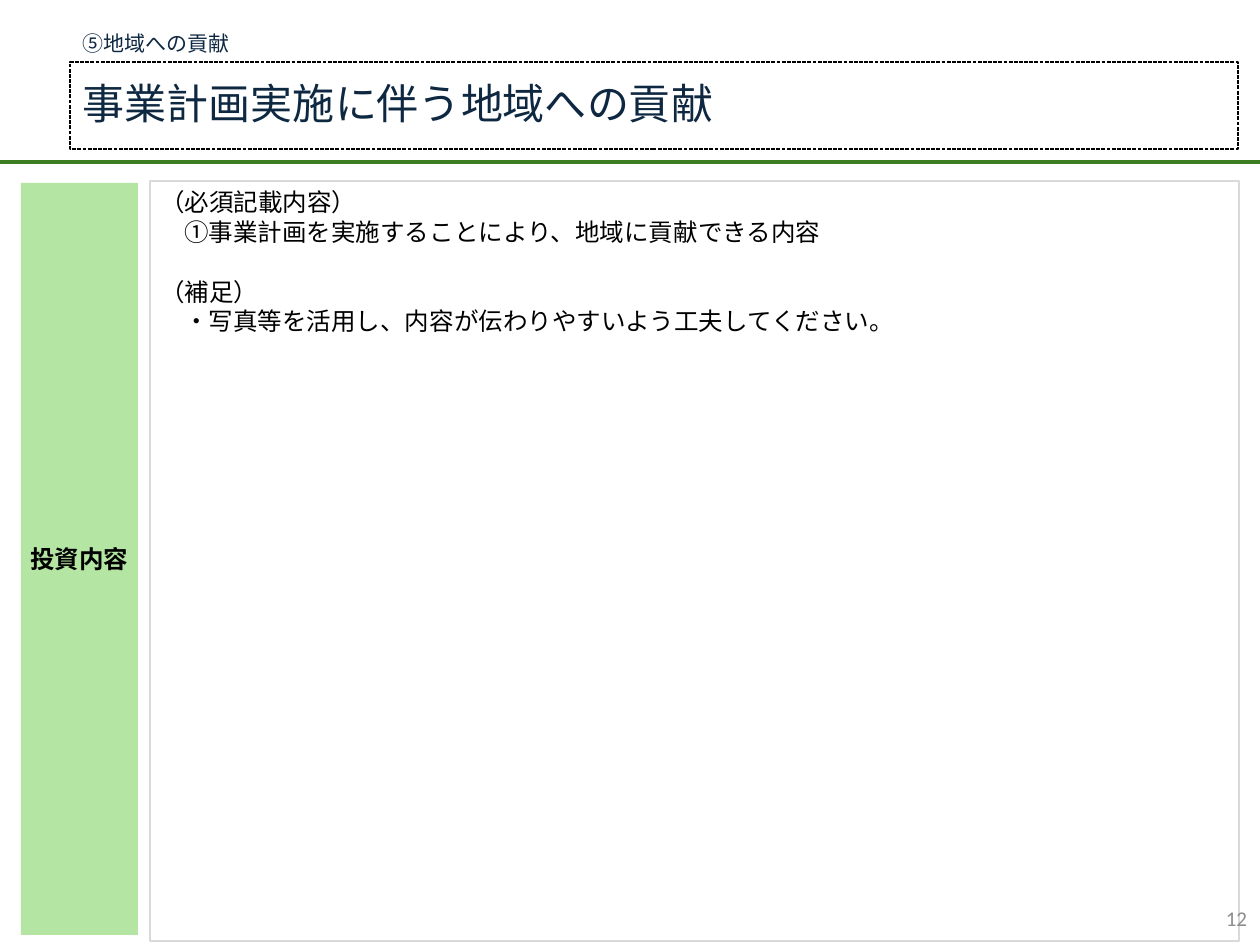
"""Build the regional contribution slide of a business plan."""
from dataclasses import dataclass
from typing import Optional

import pptx
import pptx.util
import pptx.dml.color
import pptx.enum.dml
import pptx.enum.shapes
import pptx.enum.text
import pptx.oxml
import pptx.oxml.ns

RGB = pptx.dml.color.RGBColor
ALIGN = pptx.enum.text.PP_ALIGN
ANCHOR = pptx.enum.text.MSO_ANCHOR
Pt = pptx.util.Pt

EMU_PER_PX = 914400 / 126
WIDTH, HEIGHT = 1260, 945
JP_FONT = "Noto Sans CJK JP"

WHITE = RGB(0xFF, 0xFF, 0xFF)
BLACK = RGB(0x00, 0x00, 0x00)
NAVY = RGB(0x0E, 0x28, 0x41)
GREEN = RGB(0x3B, 0x7D, 0x23)
LIGHT_GREEN = RGB(0xB4, 0xE5, 0xA2)
LIGHT_GRAY = RGB(0xD9, 0xD9, 0xD9)
GRAY = RGB(0x8C, 0x8C, 0x8C)


@dataclass(frozen=True)
class Para:
    text: str
    indent: int = 0
    before: int = 0


@dataclass(frozen=True)
class Panel:
    box: tuple[int, int, int, int]
    paras: tuple[Para, ...]
    size: int
    color: RGB = BLACK
    font: str = JP_FONT
    bold: bool = False
    align: ALIGN = ALIGN.LEFT
    anchor: ANCHOR = ANCHOR.MIDDLE
    insets: tuple[int, int] = (13, 6)
    spacing: Optional[float] = None
    fill: Optional[RGB] = None
    line: Optional[RGB] = None
    dashed: bool = False


PANELS = (
    Panel((150, 181, 1089, 760),
          (Para("（必須記載内容）"),
           Para("①事業計画を実施することにより、地域に貢献できる内容", indent=24),
           Para("（補足）", before=17),
           Para("・写真等を活用し、内容が伝わりやすいよう工夫してください。", indent=24)),
          14, anchor=ANCHOR.TOP, insets=(10, 6), spacing=Pt(17),
          fill=WHITE, line=LIGHT_GRAY),
    Panel((70, 25, 368, 34), (Para("⑤地域への貢献"),), 12, NAVY,
          anchor=ANCHOR.TOP, spacing=Pt(14)),
    Panel((70, 62, 1168, 87), (Para("事業計画実施に伴う地域への貢献"),), 24, NAVY,
          spacing=0.9, fill=WHITE, line=BLACK, dashed=True),
    Panel((21, 183, 117, 752), (Para("投資内容"),), 14, bold=True,
          align=ALIGN.CENTER, insets=(5, 5), fill=LIGHT_GREEN),
    Panel((976, 893, 284, 50), (Para("12"),), 12, GRAY, "Calibri", align=ALIGN.RIGHT),
)


def px(value: int) -> int:
    """Turn pixels into EMU."""
    return round(value * EMU_PER_PX)


def add_para(p, para: Para, panel: Panel) -> None:
    """Fill one paragraph with its run."""
    p.alignment = panel.align
    p.space_before = Pt(para.before)
    if panel.spacing is not None:
        p.line_spacing = panel.spacing
    if para.indent:
        p._p.get_or_add_pPr().set("marL", str(px(para.indent)))
    r = p.add_run()
    r.text = para.text
    r.font.size = Pt(panel.size)
    r.font.bold = panel.bold
    r.font.color.rgb = panel.color
    r.font.name = panel.font
    ea = pptx.oxml.parse_xml(
        f'<a:ea {pptx.oxml.ns.nsdecls("a")} typeface="{panel.font}"/>')
    r._r.rPr.find(pptx.oxml.ns.qn("a:latin")).addnext(ea)


def add_panel(s, panel: Panel) -> None:
    """Draw a filled panel or a plain text box with its text."""
    box = [px(v) for v in panel.box]
    if panel.fill is None:
        sp = s.shapes.add_textbox(*box)
    else:
        sp = s.shapes.add_shape(pptx.enum.shapes.MSO_SHAPE.RECTANGLE, *box)
        sp.shadow.inherit = False
        sp.fill.solid()
        sp.fill.fore_color.rgb = panel.fill
        if panel.line is None:
            sp.line.fill.background()
        else:
            sp.line.color.rgb = panel.line
            sp.line.width = Pt(0.75)
        if panel.dashed:
            sp.line.dash_style = pptx.enum.dml.MSO_LINE.SQUARE_DOT
    tf = sp.text_frame
    tf.word_wrap = True
    tf.vertical_anchor = panel.anchor
    tf.margin_left = tf.margin_right = px(panel.insets[0])
    tf.margin_top = tf.margin_bottom = px(panel.insets[1])
    for i, para in enumerate(panel.paras):
        add_para(tf.add_paragraph() if i else tf.paragraphs[0], para, panel)


def add_rule(s, y: int) -> None:
    """Draw the full-width rule under the title."""
    rule = s.shapes.add_connector(
        pptx.enum.shapes.MSO_CONNECTOR.STRAIGHT, 0, px(y), px(WIDTH), px(y))
    rule.line.color.rgb = GREEN
    rule.line.width = Pt(2)
    rule._element.spPr.append(
        pptx.oxml.parse_xml(f'<a:effectLst {pptx.oxml.ns.nsdecls("a")}/>'))


def main() -> None:
    """Build and save the slide."""
    prs = pptx.Presentation()
    prs.slide_width, prs.slide_height = px(WIDTH), px(HEIGHT)
    s = prs.slides.add_slide(prs.slide_layouts[6])
    add_rule(s, 162)
    for panel in PANELS:
        add_panel(s, panel)
    prs.save("out.pptx")


if __name__ == "__main__":
    main()
